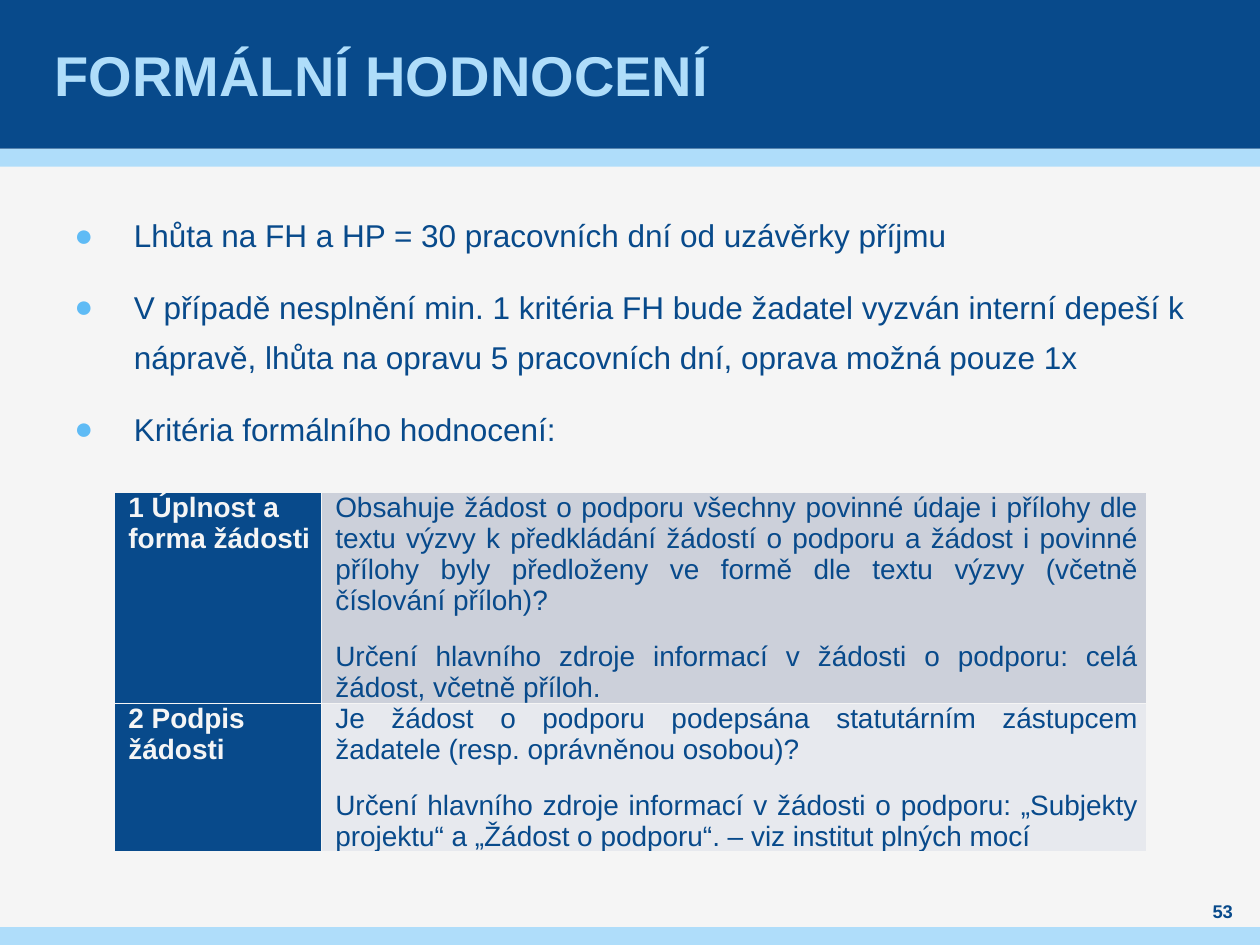
from lxml.etree import SubElement
from pptx import Presentation
from pptx.dml.color import RGBColor
from pptx.enum.shapes import MSO_SHAPE as Shape
from pptx.enum.text import MSO_ANCHOR as Anchor, MSO_AUTO_SIZE as AutoSize, PP_ALIGN as Align
from pptx.oxml.ns import qn
from pptx.util import Cm, Pt

NAVY, SKY, PALE = "084A8B", "AFDDFA", "F5F5F5"
WIDTH, HEIGHT, HEADER, STRIPE = 25.4, 19.05, 3, 0.36

BULLETS = [
    "Lhůta na FH a HP = 30 pracovních dní od uzávěrky příjmu",
    "V případě nesplnění min. 1 kritéria FH bude žadatel vyzván interní depeší k nápravě, "
    "lhůta na opravu 5 pracovních dní, oprava možná pouze 1x",
    "Kritéria formálního hodnocení:",
]
CRITERIA = [
    ("1 Úplnost a forma žádosti", [
        "Obsahuje žádost o podporu všechny povinné údaje i přílohy dle textu výzvy "
        "k předkládání žádostí o podporu a žádost i povinné přílohy byly předloženy "
        "ve formě dle textu výzvy (včetně číslování příloh)?",
        "Určení hlavního zdroje informací v žádosti o podporu: celá žádost, včetně příloh.",
    ], "CCD0DA", 4.25),
    ("2 Podpis žádosti", [
        "Je žádost o podporu podepsána statutárním zástupcem žadatele "
        "(resp. oprávněnou osobou)?",
        "Určení hlavního zdroje informací v žádosti o podporu: „Subjekty projektu“ "
        "a „Žádost o podporu“. – viz institut plných mocí",
    ], "E7E9EE", 3),
]


def rgb(value):
    return RGBColor.from_string(value)


def set_attrs(target, **values):
    for name, value in values.items():
        setattr(target, name, value)


def set_fill(target, color):
    target.fill.solid()
    target.fill.fore_color.rgb = rgb(color)


class SlideBuilder:
    """Holds the style and the current slide and adds each kind of element."""

    font = "Arial"
    bullet_color = "5FBBF5"

    def __init__(self, prs):
        self.s = prs.slides.add_slide(prs.slide_layouts[5])
        set_fill(self.s.background, PALE)

    def paragraphs(self, tf, texts, size, color=NAVY, bold=False, indent=None, hang=0,
                   **layout):
        for i, text in enumerate(texts):
            p = tf.paragraphs[0] if i == 0 else tf.add_paragraph()
            r = p.add_run()
            r.text = text
            set_attrs(r.font, name=self.font, size=Pt(size), bold=bold)
            r.font.color.rgb = rgb(color)
            set_attrs(p, **layout)
            if indent is not None:
                pPr = p._p.get_or_add_pPr()
                pPr.set("marL", str(Cm(indent)))
                pPr.set("indent", str(-Cm(hang)))

    def frame(self, sp, box, side=0, anchor=Anchor.TOP):
        set_attrs(sp, **dict(zip(("left", "top", "width", "height"), map(Cm, box))))
        tf = sp.text_frame
        set_attrs(tf, word_wrap=True, auto_size=AutoSize.NONE, vertical_anchor=anchor,
                  margin_left=Cm(side), margin_right=Cm(side), margin_top=0, margin_bottom=0)
        return tf

    def band(self, top, height, color):
        sp = self.s.shapes.add_shape(Shape.RECTANGLE, 0, Cm(top), Cm(WIDTH), Cm(height))
        sp.shadow.inherit = False
        set_fill(sp, color)
        sp.line.fill.background()

    def title(self, text, box):
        sp = self.s.shapes.title
        self.s.shapes._spTree.append(sp._element)
        tf = self.frame(sp, box, 0.1, Anchor.MIDDLE)
        self.paragraphs(tf, [text], 32, SKY, True, alignment=Align.LEFT)

    def text(self, texts, box, size, anchor=Anchor.TOP, **style):
        tf = self.frame(self.s.shapes.add_textbox(0, 0, 0, 0), box, anchor=anchor)
        self.paragraphs(tf, texts, size, **style)
        return tf

    def bullets(self, texts, box, hang=1.2):
        tf = self.text(texts, box, 18, indent=hang, hang=hang, line_spacing=Pt(28.8),
                       space_before=Pt(6), space_after=Pt(6))
        for p in tf.paragraphs:
            pPr = p._p.get_or_add_pPr()
            color = SubElement(pPr, qn("a:buClr"))
            SubElement(color, qn("a:srgbClr"), val=self.bullet_color)
            SubElement(pPr, qn("a:buFont"), typeface=self.font)
            SubElement(pPr, qn("a:buChar"), char="●")

    def cell(self, cell, texts, fill, **style):
        set_attrs(cell, margin_left=Cm(0.18), margin_right=Cm(0.18), margin_top=0,
                  margin_bottom=0, vertical_anchor=Anchor.TOP)
        self.paragraphs(cell.text_frame, texts, 16, indent=0.1, space_before=Pt(3), **style)
        tcPr = cell._tc.get_or_add_tcPr()
        for side in ("lnL", "lnR", "lnT", "lnB"):
            ln = SubElement(tcPr, qn(f"a:{side}"), w=str(Pt(1)))
            SubElement(SubElement(ln, qn("a:solidFill")), qn("a:srgbClr"), val=PALE)
        set_fill(cell, fill)

    def table(self, rows, left, top, widths):
        height = sum(row[-1] for row in rows)
        table = self.s.shapes.add_table(len(rows), len(widths), Cm(left), Cm(top),
                                        Cm(sum(widths)), Cm(height)).table
        set_attrs(table, first_row=False, horz_banding=False)
        for column, width in zip(table.columns, widths):
            column.width = Cm(width)
        for i, (name, questions, fill, row_height) in enumerate(rows):
            table.rows[i].height = Cm(row_height)
            self.cell(table.cell(i, 0), [name], NAVY, color=PALE, bold=True,
                      space_after=Pt(3))
            self.cell(table.cell(i, 1), questions, fill, alignment=Align.JUSTIFY,
                      space_after=Pt(11))


def main():
    prs = Presentation()
    set_attrs(prs, slide_width=Cm(WIDTH), slide_height=Cm(HEIGHT))
    slide = SlideBuilder(prs)
    slide.band(HEADER, STRIPE, SKY)
    slide.band(0, HEADER, NAVY)
    slide.band(HEIGHT - STRIPE, STRIPE, SKY)
    slide.title("FORMÁLNÍ HODNOCENÍ", (1, 0, 23.4, HEADER))
    slide.bullets(BULLETS, (1.5, 4.11, 22.4, 11.4))
    slide.text(["53"], (24, 18.11, 1.3, 0.51), 10.5, Anchor.MIDDLE, bold=True,
               alignment=Align.CENTER)
    slide.table(CRITERIA, 2.31, 9.92, (4.17, 16.64))
    prs.save("out.pptx")


if __name__ == "__main__":
    main()
